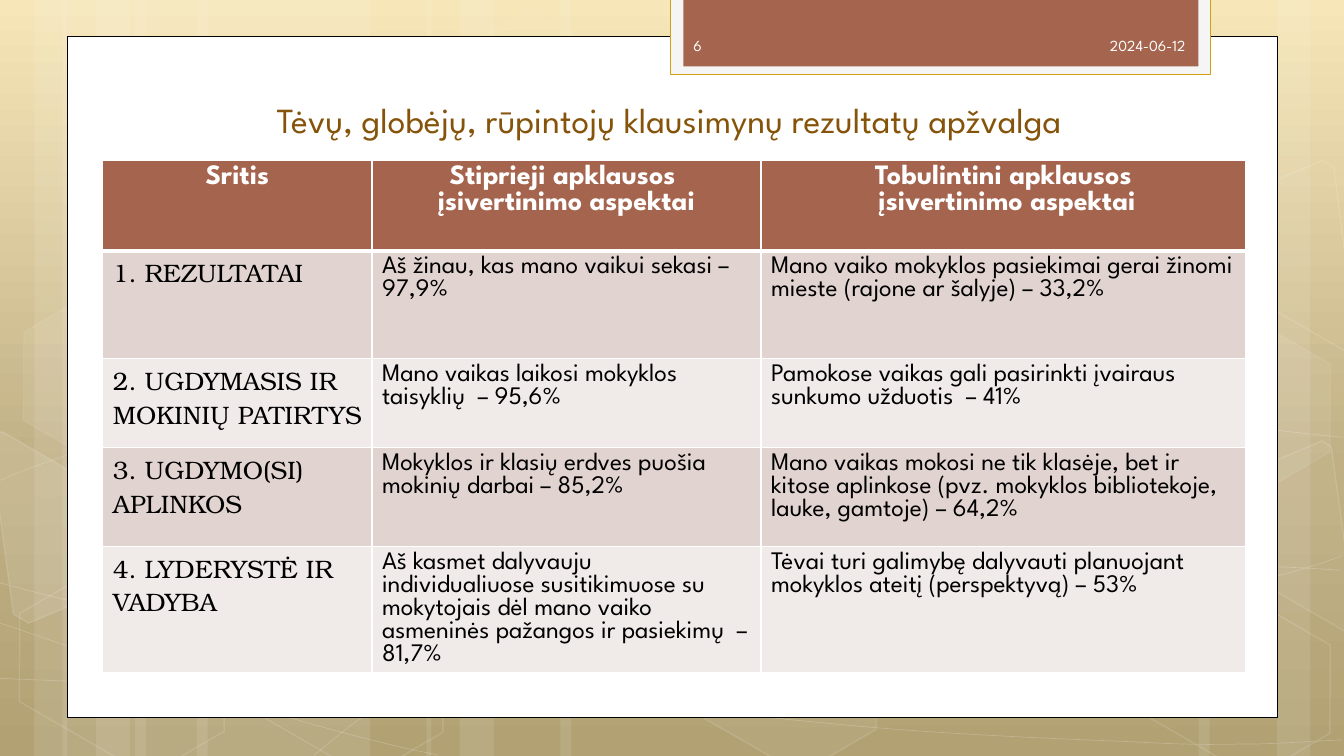
from copy import deepcopy
from math import cos, radians, sin
from lxml.etree import SubElement
from pptx import Presentation
from pptx.dml.color import RGBColor
from pptx.enum.shapes import MSO_SHAPE
from pptx.enum.text import MSO_ANCHOR, MSO_AUTO_SIZE, PP_ALIGN
from pptx.oxml import parse_xml
from pptx.oxml.ns import nsdecls, qn
from pptx.util import Inches, Pt

WHITE = RGBColor(0xFF, 0xFF, 0xFF)
OFF_WHITE = RGBColor(0xFE, 0xFE, 0xFE)
BLACK = RGBColor(0, 0, 0)
GREY = RGBColor(0xF5, 0xF5, 0xF5)
GOLD = RGBColor(0xD2, 0xA0, 0x10)
BROWN = RGBColor(0x85, 0x54, 0x0A)
RUST = RGBColor(0xA5, 0x64, 0x4E)
BAND_DARK = RGBColor(0xE1, 0xD3, 0xD0)
BAND_LIGHT = RGBColor(0xF0, 0xEA, 0xE9)
BACKDROP = [(0, RGBColor(0xF6, 0xE4, 0xB0)), (0.62, RGBColor(0xBA, 0xA8, 0x78)),
            (1, RGBColor(0xA9, 0x97, 0x64))]
SANS = "League Spartan"
SERIF = "TeX Gyre Bonum"
TILT = 30

STRIPES = [(1.34, 2.33), (0, 0.67), (0.34, 1.11), (1.95, 2.33), (0.62, 0.67), (0.95, 1.11),
           (9.67, 2.33), (12.67, 0.67), (11.89, 1.11), (5.56, 4.11), (4.23, 0.67), (4.56, 1.11)]
CURVES = [
    [(-0.01, 6.73), (0.71, 6.76), (1.43, 6.79), (2.43, 6.78), (3.43, 6.77), (4.66, 6.75),
     (5.99, 6.65), (7.33, 6.55), (9.22, 6.36), (10.45, 6.17), (11.67, 5.98), (12.92, 5.68),
     (13.32, 5.51)],
    [(-0.01, 4.77), (0.37, 4.61), (0.75, 4.46), (1.51, 4.31), (2.27, 4.16), (3.34, 3.94),
     (4.52, 3.87), (5.71, 3.8), (7.14, 3.79), (8.61, 3.87), (10.08, 3.95), (12.52, 4.26),
     (13.32, 4.34)],
    [(-0.03, 6.17), (1.58, 6.72), (3.19, 7.27), (4.35, 7.49)],
    [(-0.01, 5.78), (0.4, 5.89), (0.82, 6), (1.6, 6.16), (2.37, 6.31), (3.53, 6.56),
     (4.64, 6.73), (5.76, 6.9), (7.16, 7.08), (8.26, 7.18), (9.37, 7.29), (10.55, 7.33),
     (11.26, 7.36), (11.96, 7.4), (12.14, 7.38), (12.49, 7.38), (12.83, 7.37), (13.08, 7.35),
     (13.32, 7.34)],
    [(3.12, 7.49), (3.36, 7.29), (3.59, 7.09), (3.92, 6.91), (4.24, 6.73), (4.69, 6.53),
     (5.06, 6.39), (5.43, 6.25), (5.66, 6.19), (6.15, 6.09), (6.64, 5.99), (7.54, 5.85),
     (8, 5.78), (8.47, 5.71), (8.54, 5.71), (8.96, 5.69), (9.37, 5.66), (10.02, 5.63),
     (10.48, 5.62), (10.94, 5.61), (11.71, 5.62), (11.71, 5.62), (12, 5.62), (12.3, 5.62),
     (12.59, 5.62), (12.84, 5.63), (13.06, 5.64), (13.18, 5.65), (13.3, 5.66), (13.26, 5.65),
     (13.3, 5.66)],
]
HEXAGONS = [(4.34, 0.36, 4, 8), (6.51, 5.89, 6, 12), (0.04, 5.91, None, 12), (0.08, 3.12, 7, 8),
            (2.21, 5.92, None, 12), (11.01, 5.93, None, 12), (11.01, 3.14, 7, 8)]
CUT_HEXAGONS = [
    ((0.37, 5.35), 10,
     [(-0.11, 4.34), (0.02, 4.28), (1.04, 4.87), (1.16, 5.81), (0.28, 6.18), (0.13, 6.09)]),
    ((13.03, 5.2), 4,
     [(12.24, 4.74), (13.12, 4.37), (13.21, 4.43), (13.46, 6.25), (13.38, 6.28), (12.36, 5.69)]),
    ((13.03, 2.41), None,
     [(12.24, 1.96), (13.12, 1.59), (13.23, 1.65), (13.46, 3.46), (13.38, 3.5), (12.36, 2.91)]),
]
COLUMNS = [2.67, 3.86, 4.81]
ROW_HEIGHTS = [0.9, 1.07, 0.88, 0.98, 1.05]
ROWS = [
    ("Sritis", "Stiprieji apklausos \nįsivertinimo aspektai",
     "Tobulintini apklausos\n įsivertinimo aspektai"),
    ("1. REZULTATAI", "Aš žinau, kas mano vaikui sekasi – 97,9%",
     "Mano vaiko mokyklos pasiekimai gerai žinomi mieste (rajone ar šalyje) – 33,2%"),
    ("2. UGDYMASIS IR MOKINIŲ PATIRTYS", "Mano vaikas laikosi mokyklos taisyklių  – 95,6%",
     "Pamokose vaikas gali pasirinkti įvairaus sunkumo užduotis  – 41%"),
    ("3. UGDYMO(SI) APLINKOS", "Mokyklos ir klasių erdves puošia mokinių darbai – 85,2%",
     "Mano vaikas mokosi ne tik klasėje, bet ir kitose aplinkose (pvz. mokyklos bibliotekoje, "
     "lauke, gamtoje) – 64,2%"),
    ("4. LYDERYSTĖ IR VADYBA",
     "Aš kasmet dalyvauju individualiuose susitikimuose su mokytojais dėl mano vaiko asmeninės "
     "pažangos ir pasiekimų  – 81,7%",
     "Tėvai turi galimybę dalyvauti planuojant mokyklos ateitį (perspektyvą) – 53%"),
]


def put_text(tf, text, size=18, color=BLACK, font=SANS, bold=False, align=PP_ALIGN.LEFT):
    tf.text = text
    tf.word_wrap = True
    for p in tf.paragraphs:
        p.alignment = align
        p.line_spacing = 1
        p.space_before = p.space_after = Pt(0)
        for r in p.runs:
            r.font.size, r.font.name, r.font.bold = Pt(size), font, bold
            r.font.color.rgb = color


def paint(fill, color, alpha=100):
    if alpha is None:
        fill.background()
        return
    fill.solid()
    fill.fore_color.rgb = color
    if alpha < 100:
        clr = fill._xPr.find(qn("a:solidFill"))[0]
        SubElement(clr, qn("a:alpha"), val=str(alpha * 1000))


def style(sp, fill, line=None, width=1, fill_alpha=100, line_alpha=100):
    sp.shadow.inherit = False
    paint(sp.fill, fill, fill_alpha)
    paint(sp.line.fill, line, line_alpha if line is not None else None)
    if line is not None:
        sp.line.width = Pt(width)


def add_box(s, x, y, w, h, kind=MSO_SHAPE.RECTANGLE):
    return s.shapes.add_shape(kind, Inches(x), Inches(y), Inches(w), Inches(h))


def add_outline(s, points, close):
    points = [(Inches(x), Inches(y)) for x, y in points]
    fb = s.shapes.build_freeform(*points[0])
    fb.add_line_segments(points[1:], close=close)
    return fb.convert_to_shape()


def add_curve(s, points):
    sp = add_outline(s, points, False)
    segments = sp.element.xpath(".//a:lnTo")
    for i in range(0, len(segments), 3):
        bezier = SubElement(segments[i].getparent(), qn("a:cubicBezTo"))
        for segment in segments[i:i + 3]:
            bezier.append(segment[0])
            segment.getparent().remove(segment)
    return sp


def add_tilted_outline(s, center, points):
    cx, cy = center
    c, d = cos(radians(TILT)), sin(radians(TILT))
    level = [(cx + (x - cx) * c + (y - cy) * d, cy - (x - cx) * d + (y - cy) * c)
             for x, y in points]
    sp = add_outline(s, level, True)
    sp.rotation = TILT
    return sp


def add_backdrop(s, height):
    s.background.fill.gradient()
    stops = s.element.xpath(".//p:bg//a:gsLst")[0]
    stops.insert(1, deepcopy(stops[0]))
    fill = s.background.fill
    fill.gradient_angle = 270
    for stop, (position, color) in zip(fill.gradient_stops, BACKDROP):
        stop.position, stop.color.rgb = position, color
    for x, w in STRIPES:
        style(add_box(s, x, 0, w, height), WHITE, fill_alpha=10)
    for points in CURVES:
        style(add_curve(s, points), WHITE, WHITE, 0.5, None, 20)
    for x, y, fill_alpha, line_alpha in HEXAGONS:
        sp = add_box(s, x, y, 2.34, 1.52, MSO_SHAPE.HEXAGON)
        sp.adjustments[0] = 0.285
        sp.rotation = TILT
        style(sp, WHITE, WHITE, 1, fill_alpha, line_alpha)
    for center, fill_alpha, points in CUT_HEXAGONS:
        style(add_tilted_outline(s, center, points), WHITE, WHITE, 1, fill_alpha, 12)


def add_tab(s, x, y, w, h):
    style(add_box(s, x, y, w, h), GREY, GOLD)
    style(add_box(s, x + 0.13, y, w - 0.25, h - 0.08), RUST)
    for text, left, width, align in [("6", x + 0.13, 1.94, PP_ALIGN.LEFT),
                                     ("2024-06-12", x + 2.1, 3.11, PP_ALIGN.RIGHT)]:
        tb = s.shapes.add_textbox(Inches(left), Inches(y + 0.27), Inches(width), Inches(0.4))
        put_text(tb.text_frame, text, size=11, color=OFF_WHITE, align=align)
        tb.text_frame.vertical_anchor = MSO_ANCHOR.MIDDLE


def add_title(s, x, y, w, h):
    title = s.shapes.title
    title.left, title.top, title.width, title.height = map(Inches, (x, y, w, h))
    tf = title.text_frame
    put_text(tf, "Tėvų, globėjų, rūpintojų klausimynų rezultatų apžvalga", size=25.2,
             color=BROWN, align=PP_ALIGN.CENTER)
    tf.auto_size = MSO_AUTO_SIZE.NONE
    tf.vertical_anchor = MSO_ANCHOR.BOTTOM
    title.element.getparent().append(title.element)


def set_borders(cell, **widths):
    tcPr = cell._tc.get_or_add_tcPr()
    for i, (side, width) in enumerate(widths.items()):
        tcPr.insert(i, parse_xml(
            f'<a:ln{side} {nsdecls("a")} w="{Pt(width)}"><a:solidFill>'
            f'<a:srgbClr val="{WHITE}"/></a:solidFill></a:ln{side}>'))


def add_survey_table(s, x, y):
    frame = s.shapes.add_table(len(ROWS), len(COLUMNS), Inches(x), Inches(y),
                               Inches(sum(COLUMNS)), Inches(sum(ROW_HEIGHTS)))
    table = frame.table
    for column, width in zip(table.columns, COLUMNS):
        column.width = Inches(width)
    for i, (row, height, texts) in enumerate(zip(table.rows, ROW_HEIGHTS, ROWS)):
        row.height = Inches(height)
        for j, (cell, text) in enumerate(zip(row.cells, texts)):
            if i == 0:
                look = dict(size=20, color=WHITE, bold=True, align=PP_ALIGN.CENTER)
            else:
                look = dict(font=SERIF) if j == 0 else {}
            put_text(cell.text_frame, text, **look)
            paint(cell.fill, RUST if i == 0 else BAND_DARK if i % 2 else BAND_LIGHT)
            set_borders(cell, L=1, R=1, T=3 if i == 1 else 1, B=3 if i == 0 else 1)


def main():
    prs = Presentation()
    prs.slide_width, prs.slide_height = Inches(40 / 3), Inches(7.5)
    s = prs.slides.add_slide(prs.slide_layouts[5])
    add_backdrop(s, 7.5)
    style(add_box(s, 0.67, 0.36, 12, 6.76), WHITE, BLACK, 0.5)
    add_tab(s, 6.65, -0.02, 5.36, 0.76)
    add_title(s, 1.52, 0.79, 10.24, 0.65)
    add_survey_table(s, 1.02, 1.59)
    prs.save("out.pptx")


if __name__ == "__main__":
    main()
